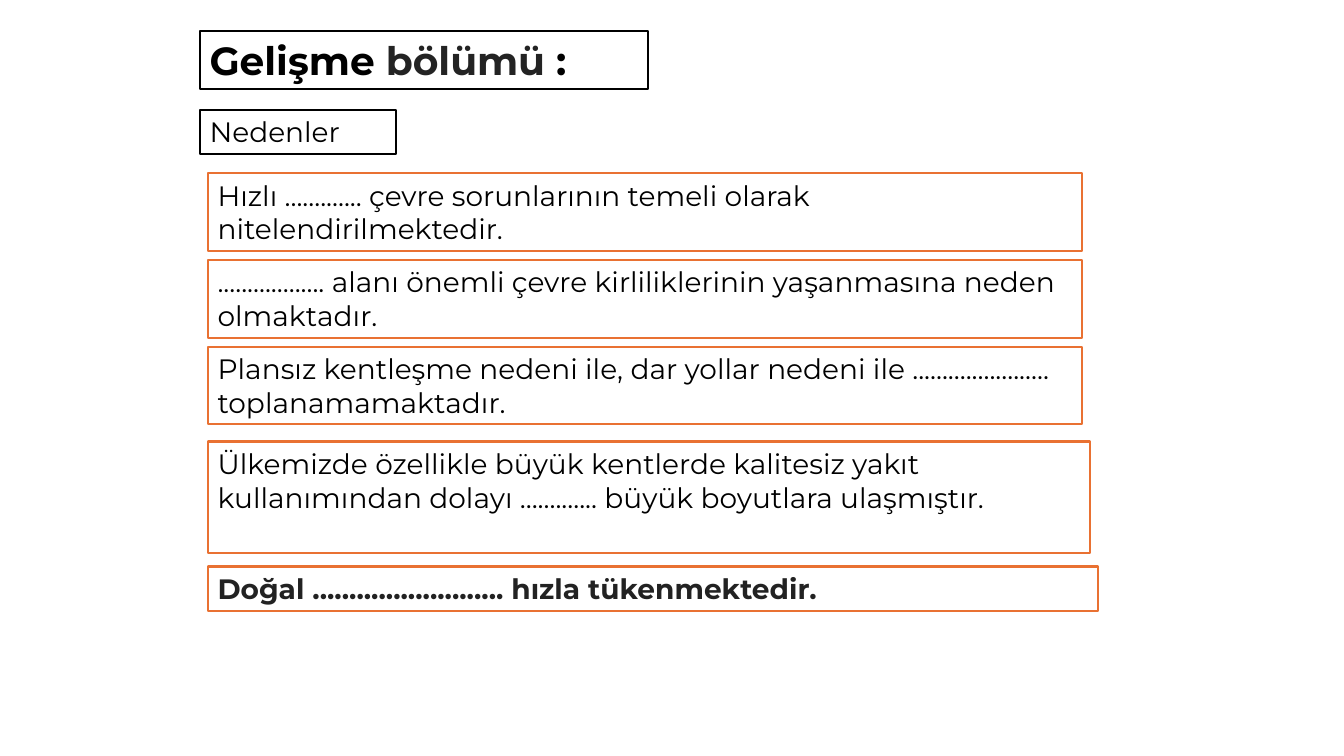
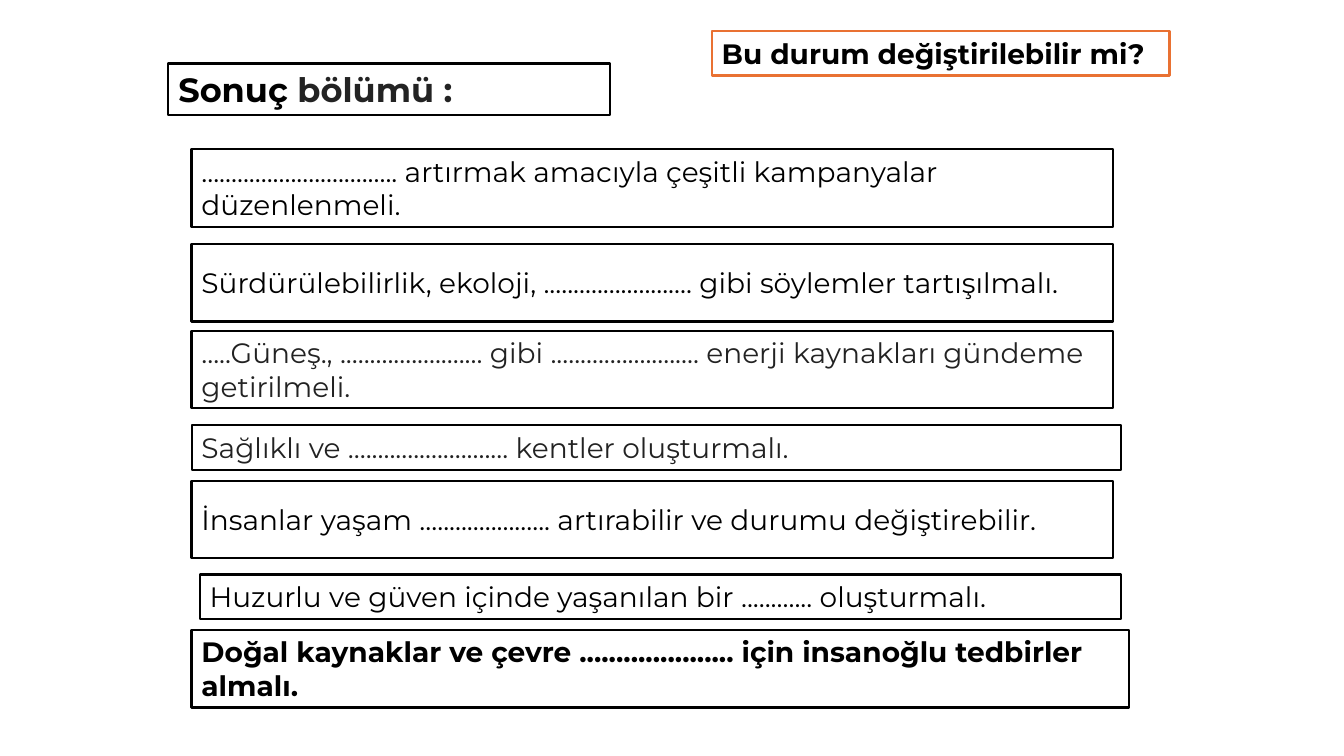
from dataclasses import dataclass

from pptx import Presentation
from pptx.dml.color import RGBColor
from pptx.enum import shapes, text
from pptx.slide import Slide
from pptx.util import Inches, Pt

FONT = "Montserrat"
BLACK, CHARCOAL, HEADING_GREY = "000000", "222222", "232323"
WHITE, ORANGE = "FFFFFF", "E97132"
ONE_LINE, TWO_LINES, THREE_LINES = 0.44, 0.77, 1.11  # box heights
TOP, MIDDLE = text.MSO_ANCHOR.TOP, text.MSO_ANCHOR.MIDDLE
LEFT, JUSTIFY = text.PP_ALIGN.LEFT, text.PP_ALIGN.JUSTIFY


@dataclass(frozen=True)
class Run:
    words: str
    color: str = BLACK


@dataclass(frozen=True)
class Box:
    left: float
    top: float
    width: float
    height: float
    runs: tuple[Run, ...]
    border: str = BLACK
    size: int = 20
    bold: bool = False
    anchor: text.MSO_ANCHOR = TOP
    align: text.PP_ALIGN = LEFT


def rgb(color: str) -> RGBColor:
    return RGBColor.from_string(color)


def heading(left: float, top: float, width: float, height: float,
            size: int, *runs: Run) -> Box:
    return Box(left, top, width, height, runs, size=size, bold=True,
               anchor=MIDDLE, align=JUSTIFY)


def cause(top: float, width: float, height: float, words: str,
          color: str = BLACK, bold: bool = False) -> Box:
    return Box(2.06, top, width, height, (Run(words, color),), ORANGE, bold=bold)


def remedy(top: float, height: float, words: str, color: str = BLACK,
           left: float = 1.9, width: float = 9.14, bold: bool = False,
           anchor: text.MSO_ANCHOR = MIDDLE) -> Box:
    return Box(left, top, width, height, (Run(words, color),), bold=bold, anchor=anchor)


def draw_box(slide: Slide, box: Box) -> None:
    shape = slide.shapes.add_shape(
        shapes.MSO_SHAPE.RECTANGLE, Inches(box.left), Inches(box.top),
        Inches(box.width), Inches(box.height))
    shape.shadow.inherit = False
    shape.fill.solid()
    shape.fill.fore_color.rgb = rgb(WHITE)
    shape.line.color.rgb = rgb(box.border)
    shape.line.width = Pt(1.5)

    frame = shape.text_frame
    frame.word_wrap = True
    frame.vertical_anchor = box.anchor
    paragraph = frame.paragraphs[0]
    paragraph.alignment = box.align
    paragraph.font.name = FONT
    paragraph.font.size = Pt(box.size)
    paragraph.font.bold = box.bold
    for part in box.runs:
        run = paragraph.add_run()
        run.text = part.words
        run.font.color.rgb = rgb(part.color)


# Development section: causes
DEVELOPMENT = (
    heading(1.98, 0.31, 4.45, 0.57, 28,
            Run("Gelişme "), Run("bölümü", HEADING_GREY), Run(" :")),
    Box(1.98, 1.09, 1.95, ONE_LINE, (Run("Nedenler"),)),
    cause(1.72, 8.67, TWO_LINES,
          "Hızlı ............. çevre sorunlarının temeli olarak nitelendirilmektedir."),
    cause(2.58, 8.67, TWO_LINES,
          ".................. alanı önemli çevre kirliliklerinin yaşanmasına neden olmaktadır."),
    cause(3.44, 8.67, TWO_LINES,
          "Plansız kentleşme nedeni ile, dar yollar nedeni ile ....................... "
          "toplanamamaktadır."),
    cause(4.38, 8.75, THREE_LINES,
          "Ülkemizde özellikle büyük kentlerde kalitesiz yakıt kullanımından dolayı "
          "............. büyük boyutlara ulaşmıştır."),
    cause(5.62, 8.83, ONE_LINE,
          "Doğal .......................... hızla tükenmektedir.", CHARCOAL, bold=True),
)

# Conclusion section: remedies
CONCLUSION = (
    heading(1.67, 0.63, 4.38, 0.51, 24,
            Run("Sonuç "), Run("bölümü :", HEADING_GREY)),
    Box(7.06, 0.31, 4.54, ONE_LINE, (Run("Bu durum değiştirilebilir mi?"),),
        ORANGE, bold=True),
    remedy(1.48, TWO_LINES,
           "................................. artırmak amacıyla çeşitli kampanyalar "
           "düzenlenmeli."),
    remedy(2.42, TWO_LINES,
           "Sürdürülebilirlik, ekoloji, ......................... gibi söylemler tartışılmalı."),
    remedy(3.28, TWO_LINES,
           ".....Güneş., ........................ gibi ......................... "
           "enerji kaynakları gündeme getirilmeli.", CHARCOAL),
    remedy(4.22, ONE_LINE,
           "Sağlıklı ve ........................... kentler oluşturmalı.",
           CHARCOAL, width=9.22),
    remedy(4.77, TWO_LINES,
           "İnsanlar yaşam ...................... artırabilir ve durumu değiştirebilir."),
    remedy(5.7, ONE_LINE,
           "Huzurlu ve güven içinde yaşanılan bir ............ oluşturmalı.", left=1.98),
    remedy(6.25, TWO_LINES,
           "Doğal kaynaklar ve çevre ..................... için insanoğlu tedbirler almalı.",
           width=9.3, bold=True, anchor=TOP),
)


def main() -> None:
    presentation = Presentation()
    presentation.slide_width = Inches(13.33)
    presentation.slide_height = Inches(7.5)
    blank = presentation.slide_layouts[6]
    for boxes in (DEVELOPMENT, CONCLUSION):
        slide = presentation.slides.add_slide(blank)
        for box in boxes:
            draw_box(slide, box)
    presentation.save("out.pptx")


if __name__ == "__main__":
    main()
